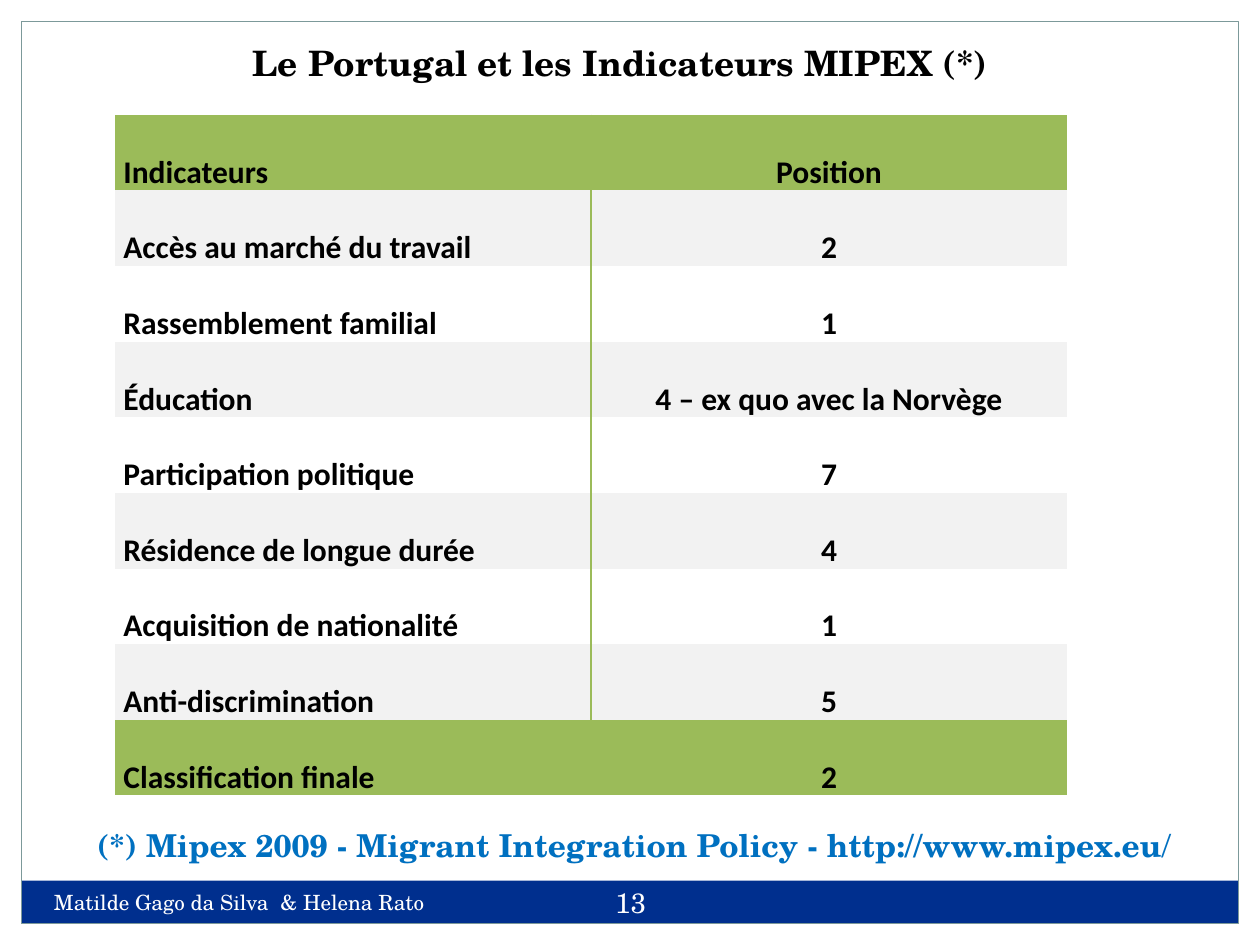
import pptx
import pptx.dml.color
import pptx.enum.shapes
import pptx.enum.text
import pptx.oxml
import pptx.oxml.ns
import pptx.util
from pptx.dml.color import RGBColor
from pptx.util import Inches

BLACK = RGBColor(0x00, 0x00, 0x00)
WHITE = RGBColor(0xFF, 0xFF, 0xFF)
NAVY = RGBColor(0x00, 0x2F, 0x8E)
BLUE = RGBColor(0x00, 0x70, 0xC0)
SLATE = RGBColor(0x7C, 0x99, 0x9A)
GREEN = RGBColor(0x9B, 0xBB, 0x59)
PALE_GREY = RGBColor(0xF2, 0xF2, 0xF2)

SERIF = "TeX Gyre Schola"
SANS = "Calibri"
NO_GRID_STYLE = "{2D5ABB26-0587-4C30-8999-92F81FD0307C}"

LEFT = pptx.enum.text.PP_ALIGN.LEFT
CENTER = pptx.enum.text.PP_ALIGN.CENTER
GROW = pptx.enum.text.MSO_AUTO_SIZE.SHAPE_TO_FIT_TEXT

PAGE_WIDTH, PAGE_HEIGHT, MARGIN = 10, 7.5, 0.17

INDICATORS = [
    ("Indicateurs", "Position"),
    ("Accès au marché du travail", "2"),
    ("Rassemblement familial", "1"),
    ("Éducation", "4 – ex quo avec la Norvège"),
    ("Participation politique", "7"),
    ("Résidence de longue durée", "4"),
    ("Acquisition de nationalité", "1"),
    ("Anti-discrimination", "5"),
    ("Classification finale", "2"),
]


def apply_format(target, values):
    for name, value in values.items():
        setattr(target, name, value)


class SlideBuilder:
    """Holds the text style and the slide being filled."""

    def __init__(self, slide):
        self.slide = slide

    def style_run(self, run, size, color, font=SERIF, bold=False):
        apply_format(run.font, {"name": font, "size": pptx.util.Pt(size), "bold": bold})
        run.font.color.rgb = color

    def rectangle(self, left, top, width, height, fill=None, line=None):
        shape = self.slide.shapes.add_shape(
            pptx.enum.shapes.MSO_SHAPE.RECTANGLE,
            Inches(left), Inches(top), Inches(width), Inches(height))
        shape.shadow.inherit = False
        if fill is None:
            shape.fill.background()
        else:
            shape.fill.solid()
            shape.fill.fore_color.rgb = fill
        if line is None:
            shape.line.fill.background()
        else:
            shape.line.color.rgb = line
            shape.line.width = pptx.util.Pt(0.75)

    def text(self, left, top, width, height, runs, size, color, align=LEFT, **frame_format):
        """Add a text box; runs are (wording, bold) pairs."""
        box = self.slide.shapes.add_textbox(
            Inches(left), Inches(top), Inches(width), Inches(height))
        apply_format(box.text_frame, {"word_wrap": True, **frame_format})
        paragraph = box.text_frame.paragraphs[0]
        paragraph.alignment = align
        for wording, bold in runs:
            run = paragraph.add_run()
            run.text = wording
            self.style_run(run, size, color, bold=bold)

    def cell_border(self, cell, side, color, width):
        border = pptx.oxml.parse_xml(
            f'<a:{side} {pptx.oxml.ns.nsdecls("a")} w="{pptx.util.Pt(width)}">'
            f'<a:solidFill><a:srgbClr val="{color}"/></a:solidFill></a:{side}>')
        cell._tc.get_or_add_tcPr().insert(0, border)

    def table(self, left, top, width, height, rows):
        table = self.slide.shapes.add_table(
            len(rows), len(rows[0]),
            Inches(left), Inches(top), Inches(width), Inches(height)).table
        apply_format(table, {"first_row": False, "horz_banding": False})
        style_id = table._tbl.tblPr.find(pptx.oxml.ns.qn("a:tableStyleId"))
        style_id.text = NO_GRID_STYLE
        for row_index, row in enumerate(rows):
            for column_index, wording in enumerate(row):
                cell = table.cell(row_index, column_index)
                apply_format(cell, {
                    "margin_left": Inches(0.07), "margin_right": Inches(0.07),
                    "margin_top": 0, "margin_bottom": 0})
                if row_index in (0, len(rows) - 1):
                    cell.fill.solid()
                    cell.fill.fore_color.rgb = GREEN
                elif row_index % 2:
                    cell.fill.solid()
                    cell.fill.fore_color.rgb = PALE_GREY
                else:
                    cell.fill.background()
                self.cell_border(cell, "lnL" if column_index else "lnR", GREEN, 1.5)
                paragraph = cell.text_frame.paragraphs[0]
                apply_format(paragraph, {
                    "alignment": CENTER if column_index else LEFT, "line_spacing": 2.0})
                run = paragraph.add_run()
                run.text = wording
                self.style_run(run, 18, BLACK, SANS, True)


def main():
    deck = pptx.Presentation()
    apply_format(deck, {"slide_width": Inches(PAGE_WIDTH),
                        "slide_height": Inches(PAGE_HEIGHT)})
    builder = SlideBuilder(deck.slides.add_slide(deck.slide_layouts[6]))

    page_margins = [
        (0, 0, PAGE_WIDTH, MARGIN),
        (PAGE_WIDTH - MARGIN, 0, MARGIN, PAGE_HEIGHT),
        (0, 0, MARGIN, PAGE_HEIGHT),
    ]
    for margin_band in page_margins:
        builder.rectangle(*margin_band, fill=WHITE)
    frame_width = PAGE_WIDTH - 2 * MARGIN
    builder.rectangle(MARGIN, 6.99, frame_width, 0.34, fill=NAVY)
    builder.rectangle(MARGIN, MARGIN, frame_width, PAGE_HEIGHT - 2 * MARGIN, line=SLATE)

    builder.text(0.33, 7.01, 3.92, 0.4,
                 [("Matilde Gago da Silva  & Helena Rato", False)], 12, WHITE)
    number_margins = {f"margin_{side}": Inches(0.05)
                      for side in ("left", "top", "right", "bottom")}
    builder.text(4.67, 6.92, 0.67, 0.48, [("13", False)], 16, WHITE, CENTER,
                 vertical_anchor=pptx.enum.text.MSO_ANCHOR.MIDDLE, **number_margins)
    builder.text(0.2, 0.28, 9.53, 0.44,
                 [("Le Portugal et les Indicateurs MIPEX (*) ", True)],
                 20, BLACK, CENTER, auto_size=GROW)
    builder.table(0.91, 0.91, 7.56, 5.4, INDICATORS)
    builder.text(0.67, 6.51, 8.92, 0.4,
                 [("(*) Mipex 2009 - Migrant Integration Policy - http://www.mipex.eu", True),
                  ("/", False)],
                 18, BLUE, word_wrap=False, auto_size=GROW)

    deck.save("out.pptx")


if __name__ == "__main__":
    main()
